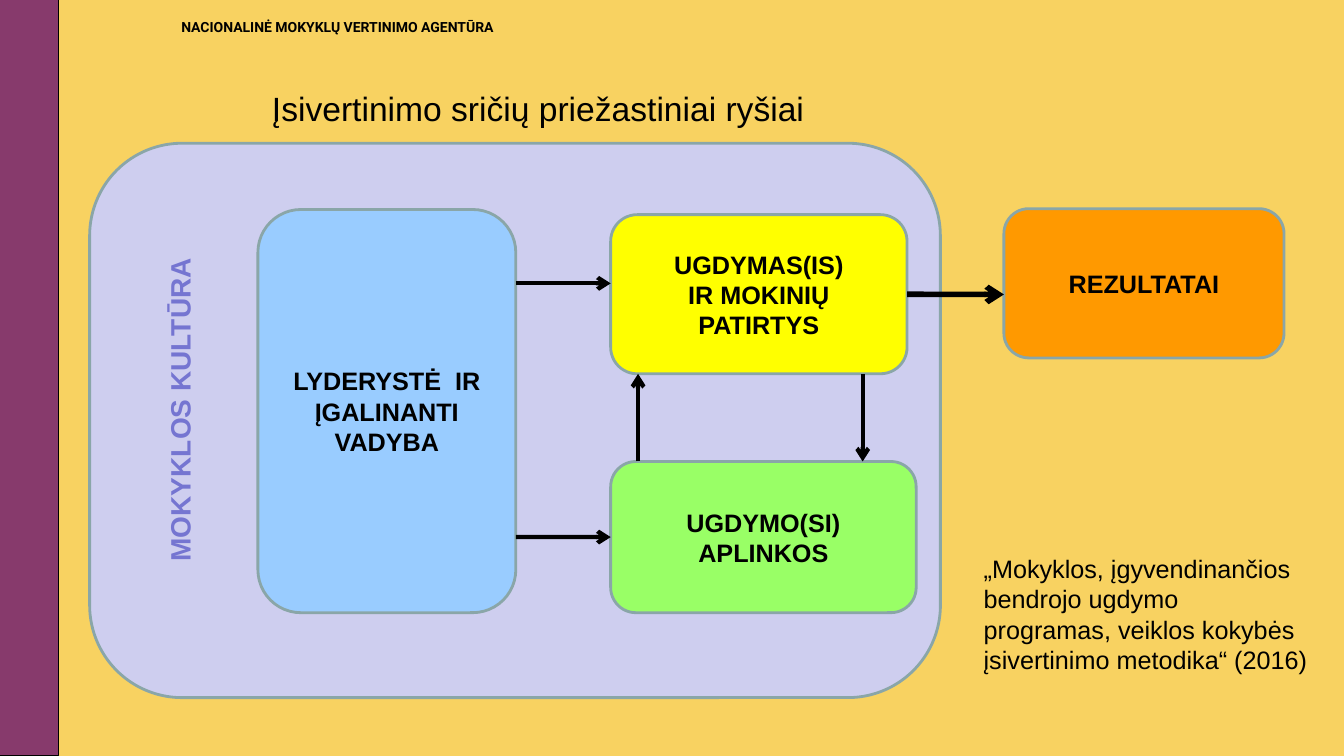
from lxml import etree
from pptx import Presentation
from pptx.dml.color import RGBColor
from pptx.enum.shapes import MSO_CONNECTOR, MSO_SHAPE
from pptx.enum.text import MSO_ANCHOR, MSO_AUTO_SIZE, PP_ALIGN
from pptx.oxml.ns import qn
from pptx.util import Cm, Pt

RECTANGLE = MSO_SHAPE.RECTANGLE
ROUNDED = MSO_SHAPE.ROUNDED_RECTANGLE
STRAIGHT = MSO_CONNECTOR.STRAIGHT
MIDDLE, TOP = MSO_ANCHOR.MIDDLE, MSO_ANCHOR.TOP
LEFT, CENTER = PP_ALIGN.LEFT, PP_ALIGN.CENTER
NO_AUTOFIT = MSO_AUTO_SIZE.NONE

BLACK = "000000"
BORDER = "8AA6A8"
LEFT_SIDE, RIGHT_SIDE = 1, 3


def color(hex_value):
    return RGBColor.from_string(hex_value)


def write(shape, lines, size, bold=False, font="Arial", ink=BLACK,
          align=LEFT, anchor=TOP, wrap=True):
    frame = shape.text_frame
    frame.auto_size = NO_AUTOFIT
    frame.word_wrap = wrap
    frame.vertical_anchor = anchor
    frame.text = "\n".join(lines)
    for para in frame.paragraphs:
        para.alignment = align
        para.font.name = font
        para.font.size = Pt(size)
        para.font.bold = bold
        para.font.color.rgb = color(ink)


def add_block(page, kind, box, fill, line=BORDER, width=2):
    shape = page.shapes.add_shape(kind, *map(Cm, box))
    shape.shadow.inherit = False
    shape.fill.solid()
    shape.fill.fore_color.rgb = color(fill)
    shape.line.color.rgb = color(line)
    shape.line.width = Pt(width)
    return shape


def add_area(page, box, fill, lines):
    area = add_block(page, ROUNDED, box, fill)
    write(area, lines, 18, bold=True, align=CENTER, anchor=MIDDLE)
    return area


def add_label(page, box, lines, size, **style):
    label = page.shapes.add_textbox(*map(Cm, box))
    write(label, lines, size, **style)
    return label


def add_arrow(page, start, end, width=3):
    arrow = page.shapes.add_connector(STRAIGHT, *map(Cm, start + end))
    arrow.line.color.rgb = color(BLACK)
    arrow.line.width = Pt(width)
    etree.SubElement(arrow.line._get_or_add_ln(), qn("a:tailEnd"), type="arrow")
    etree.SubElement(arrow.element.spPr, qn("a:effectLst"))
    return arrow


def add_header(page, box):
    left, top, width, height = box
    add_label(page, (left, top, width, 0.69),
              ["NACIONALINĖ MOKYKLŲ VERTINIMO AGENTŪRA"],
              10, bold=True, font="Roboto")
    title = page.shapes.title
    title.left, title.top = Cm(left + 2.28), Cm(top + 1.75)
    title.width, title.height = Cm(width - 0.23), Cm(height - 1.75)
    write(title, ["Įsivertinimo sričių priežastiniai ryšiai"], 24)


def add_culture_panel(page, box):
    """Draw the school culture panel with its linked areas; return the teaching area."""
    left, top, width, height = box
    add_block(page, ROUNDED, box, "CECEEF")

    culture = add_label(page, (left + 1.58, top + 2.54, 1.37, 8.25),
                        ["MOKYKLOS KULTŪRA"], 20, bold=True,
                        ink="7575D1", anchor=MIDDLE)
    culture.text_frame._txBody.bodyPr.set("vert", "vert270")

    leader_right, column = left + 10.74, left + 13.13
    teaching_top, environment_top = top + 1.8, top + 8.02
    teaching_bottom = teaching_top + 4.01
    add_area(page, (left + 4.24, top + 1.67, 6.5, 10.16), "99CCFF",
             ["LYDERYSTĖ  IR ĮGALINANTI VADYBA"])
    teaching = add_area(page, (column, teaching_top, 7.47, 4.01), "FFFF00",
                        ["UGDYMAS(IS)", "IR MOKINIŲ", "PATIRTYS"])
    environment = add_area(page, (column, environment_top, 7.7, 3.81),
                           "99FF66", ["UGDYMO(SI) APLINKOS"])

    to_teaching, to_environment = top + 3.53, environment_top + 1.9
    add_arrow(page, (leader_right, to_teaching), (column, to_teaching))
    lower = add_arrow(page, (leader_right, to_environment), (column, to_environment))
    lower.end_connect(environment, LEFT_SIDE)
    up, down = column + 0.69, column + 6.35
    add_arrow(page, (up, environment_top), (up, teaching_bottom))
    add_arrow(page, (down, teaching_bottom), (down, environment_top))
    return teaching


def add_results(page, box, teaching):
    left, top, width, height = box
    add_area(page, box, "FF9900", ["REZULTATAI"])
    level = top + 2.16
    arrow = add_arrow(page, (left - 2.44, level), (left, level), width=4)
    arrow.begin_connect(teaching, RIGHT_SIDE)


def add_source(page, box):
    add_label(page, box,
              ["„Mokyklos, įgyvendinančios", "bendrojo ugdymo",
               "programas, veiklos kokybės", "įsivertinimo metodika“ (2016)"],
              18, wrap=False)


def main():
    deck = Presentation()
    deck.slide_width, deck.slide_height = Cm(33.87), Cm(19.05)
    page = deck.slides.add_slide(deck.slide_layouts[5])
    page.background.fill.solid()
    page.background.fill.fore_color.rgb = color("F8D261")

    add_block(page, RECTANGLE, (0, 0, 1.47, 19.05), "873A6C", BLACK, 0.75)
    add_header(page, (4.32, 0.33, 23.27, 3.05))
    teaching = add_culture_panel(page, (2.26, 3.61, 21.44, 13.97))
    add_results(page, (25.3, 5.26, 7.06, 3.76), teaching)
    add_source(page, (24.54, 13.82, 8.59, 3.28))
    deck.save("out.pptx")


if __name__ == "__main__":
    main()
